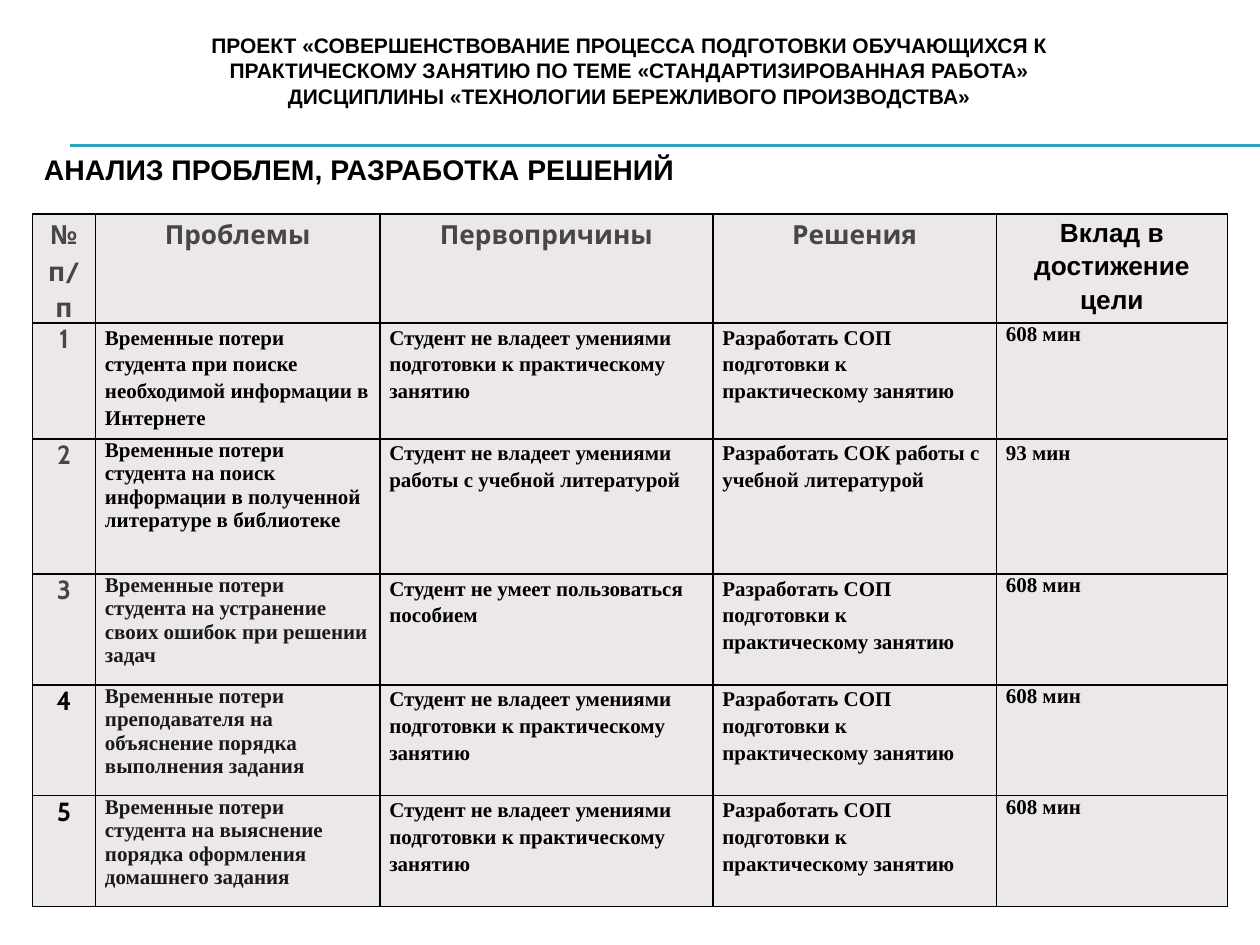
"""Build the slide on problem analysis and solutions."""
from lxml.etree import SubElement
from pptx import Presentation
from pptx.dml.color import RGBColor
from pptx.enum.shapes import MSO_CONNECTOR
from pptx.enum.text import MSO_ANCHOR, PP_ALIGN
from pptx.oxml.ns import qn
from pptx.util import Pt

BLACK = RGBColor(0x00, 0x00, 0x00)
INK = RGBColor(0x19, 0x19, 0x19)
GRAY = RGBColor(0x46, 0x46, 0x46)
PALE = RGBColor(0xEC, 0xE8, 0xE9)
TEAL = RGBColor(0x2D, 0xA2, 0xBF)

BANNER = [
    "ПРОЕКТ «СОВЕРШЕНСТВОВАНИЕ ПРОЦЕССА ПОДГОТОВКИ ОБУЧАЮЩИХСЯ К",
    "ПРАКТИЧЕСКОМУ ЗАНЯТИЮ ПО ТЕМЕ «СТАНДАРТИЗИРОВАННАЯ РАБОТА»",
    "ДИСЦИПЛИНЫ «ТЕХНОЛОГИИ БЕРЕЖЛИВОГО ПРОИЗВОДСТВА»",
]
TITLE = "АНАЛИЗ ПРОБЛЕМ, РАЗРАБОТКА РЕШЕНИЙ"
HEADS = ["№ п/п", "Проблемы", "Первопричины", "Решения", "Вклад в достижение цели"]
SKILL = "Студент не владеет умениями подготовки к практическому занятию"
PLAN = "Разработать СОП подготовки к практическому занятию"
ROWS = [
    ["Временные потери студента при поиске необходимой информации в Интернете",
     SKILL, PLAN, "608 мин"],
    ["Временные потери студента на поиск информации в полученной литературе в библиотеке",
     "Студент не владеет умениями работы с учебной литературой",
     "Разработать СОК работы с учебной литературой", "93 мин"],
    ["Временные потери студента на устранение своих ошибок при решении задач",
     "Студент не умеет пользоваться пособием", PLAN, "608 мин"],
    ["Временные потери преподавателя на объяснение порядка выполнения задания",
     SKILL, PLAN, "608 мин"],
    ["Временные потери студента на выяснение порядка оформления домашнего задания",
     SKILL, PLAN, "608 мин"],
]
WIDTHS = [36, 162.5, 190.3, 162, 132]
HEIGHTS = [39.6, 62.8, 77.2, 63.4, 63.4, 63.4]

HEAD = {"name": "Cabin", "size": Pt(15), "bold": True}
BODY = {"name": "Times New Roman", "size": Pt(12), "bold": True}
SMALL = {"name": "Arial", "size": Pt(12), "bold": True}
LARGE = {"name": "Arial", "size": Pt(16.2), "bold": True}
MID = {"alignment": PP_ALIGN.CENTER}
LEFT = {"alignment": PP_ALIGN.LEFT}
LOOSE = {"line_spacing": 1.15}
INSET = {"margin_left": Pt(5.4), "margin_right": Pt(5.4), "margin_top": 0, "margin_bottom": 0}


def apply(item, form):
    """Set each attribute named in the format."""
    for key, value in form.items():
        setattr(item, key, value)


class Painter:
    """Hold the slide and its style."""

    def __init__(self, slide):
        """Keep the slide to draw on."""
        self.slide = slide

    def put(self, frame, lines, font, para, color=BLACK):
        """Fill a text frame with one paragraph per line."""
        frame.word_wrap = True
        for i, line in enumerate(lines):
            part = frame.add_paragraph() if i else frame.paragraphs[0]
            apply(part, para)
            run = part.add_run()
            run.text = line
            apply(run.font, font)
            run.font.color.rgb = color

    def label(self, box, lines, font, para, anchor):
        """Add a text box."""
        frame = self.slide.shapes.add_textbox(*map(Pt, box)).text_frame
        frame.vertical_anchor = anchor
        self.put(frame, lines, font, para)

    def rule(self, left, right, top):
        """Add a thin level line."""
        ends = map(Pt, (left, top, right, top))
        line = self.slide.shapes.add_connector(MSO_CONNECTOR.STRAIGHT, *ends)
        line.line.color.rgb = TEAL
        line.line.width = Pt(0.75)
        SubElement(line._element.spPr, qn("a:effectLst"))

    def grid(self, left, top, widths, heights):
        """Add a plain table and return it."""
        size = map(Pt, (left, top, sum(widths), sum(heights)))
        table = self.slide.shapes.add_table(len(heights), len(widths), *size).table
        apply(table, {"first_row": False, "horz_banding": False})
        for col, width in zip(table.columns, widths):
            col.width = Pt(width)
        for row, height in zip(table.rows, heights):
            row.height = Pt(height)
        return table

    def cell(self, cell, text, font, para, color):
        """Style and fill one table cell."""
        apply(cell, INSET)
        prop = cell._tc.get_or_add_tcPr()
        for side in ("lnL", "lnR", "lnT", "lnB"):
            edge = SubElement(prop, qn(f"a:{side}"), w=str(Pt(1)))
            fill = SubElement(edge, qn("a:solidFill"))
            SubElement(fill, qn("a:srgbClr"), val=str(BLACK))
        cell.fill.solid()
        cell.fill.fore_color.rgb = PALE
        self.put(cell.text_frame, [text], font, para, color)


def main():
    """Draw and save the slide."""
    deck = Presentation()
    apply(deck, {"slide_width": Pt(720), "slide_height": Pt(540)})
    pen = Painter(deck.slides.add_slide(deck.slide_layouts[6]))
    for top in (82.8, 83.5):
        pen.rule(40.3, 720, top)
    pen.label((18, 82.8, 671.8, 28), [TITLE], LARGE, LEFT, MSO_ANCHOR.MIDDLE)

    table = pen.grid(18.6, 122.4, WIDTHS, HEIGHTS)
    for col, head in enumerate(HEADS):
        last = col == len(HEADS) - 1
        font = HEAD | {"name": "Arial"} if last else HEAD
        pen.cell(table.cell(0, col), head, font, MID | LOOSE, BLACK if last else GRAY)
    for row, texts in enumerate(ROWS, 1):
        pen.cell(table.cell(row, 0), str(row), HEAD, MID, GRAY if row < 4 else BLACK)
        for col, text in enumerate(texts, 1):
            loose = col in (2, 3) or (row, col) in ((1, 1), (2, 4))
            color = INK if col == 1 and row > 2 else BLACK
            pen.cell(table.cell(row, col), text, BODY, LEFT | LOOSE if loose else LEFT, color)

    pen.label((25.2, 15.1, 668.9, 51), BANNER, SMALL, MID, MSO_ANCHOR.TOP)
    deck.save("out.pptx")


if __name__ == "__main__":
    main()
